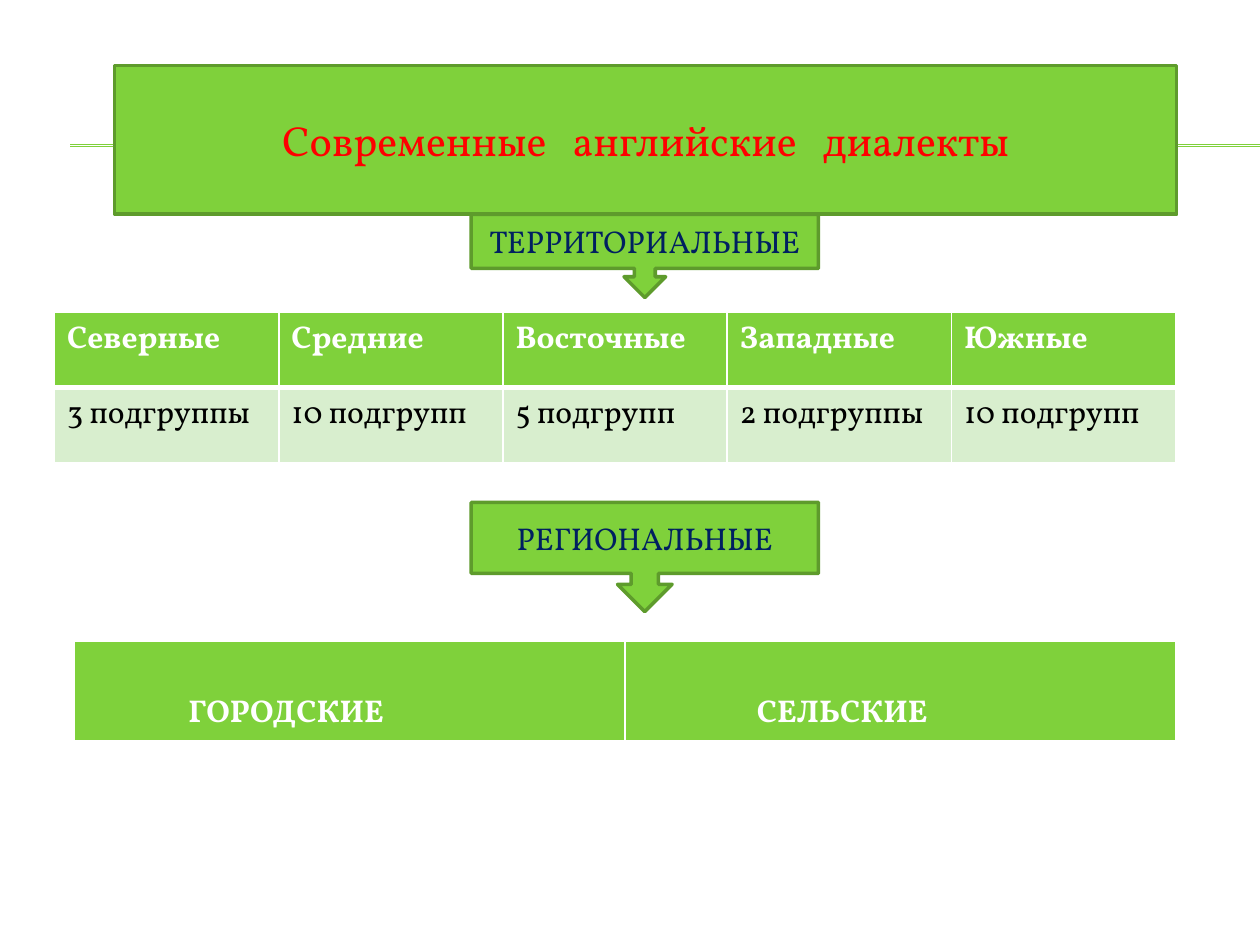
import pptx
import pptx.dml.color
import pptx.enum.shapes
import pptx.enum.text
import pptx.oxml
import pptx.oxml.ns
import pptx.util

Cm = pptx.util.Cm
Pt = pptx.util.Pt
qn = pptx.oxml.ns.qn
SHAPE = pptx.enum.shapes.MSO_SHAPE
MIDDLE = pptx.enum.text.MSO_ANCHOR.MIDDLE
CENTER = pptx.enum.text.PP_ALIGN.CENTER
NSDECL = pptx.oxml.ns.nsdecls("a")

COLORS = {
    "green": "7FD13B",
    "outline": "5E9B2C",
    "pale": "D8EECE",
    "title": "FF0000",
    "navy": "002060",
    "white": "FFFFFF",
    "black": "000000",
}


class SlideBuilder:
    font = "Vollkorn"
    size = 18

    def __init__(self, slide):
        self.slide = slide

    def rgb(self, name):
        return pptx.dml.color.RGBColor.from_string(COLORS[name])

    def place(self, sp, x, y, w, h):
        sp.left, sp.top, sp.width, sp.height = Cm(x), Cm(y), Cm(w), Cm(h)

    def set_font(self, p, color, size=None, bold=False):
        p.font.name = self.font
        p.font.size = Pt(size or self.size)
        p.font.bold = bold
        p.font.color.rgb = self.rgb(color)

    def paint(self, sp):
        sp.fill.solid()
        sp.fill.fore_color.rgb = self.rgb("green")
        sp.line.color.rgb = self.rgb("outline")
        sp.line.width = Pt(2)

    def rule(self, x1, x2, y):
        line = self.slide.shapes.add_connector(
            pptx.enum.shapes.MSO_CONNECTOR.STRAIGHT, Cm(x1), Cm(y), Cm(x2), Cm(y))
        line.line.color.rgb = self.rgb("green")
        line.line.width = Pt(0.75)
        line._element.spPr.append(pptx.oxml.parse_xml(f"<a:effectLst {NSDECL}/>"))
        self.slide.shapes._spTree.insert(2, line._element)

    def scroll_title(self, words, x, y, w, h):
        sp = self.slide.shapes.title
        self.place(sp, x, y, w, h)
        sp._element.spPr.append(pptx.oxml.parse_xml(
            f'<a:prstGeom {NSDECL} prst="horizontalScroll"><a:avLst/></a:prstGeom>'))
        self.paint(sp)
        tf = sp.text_frame
        tf.auto_size = pptx.enum.text.MSO_AUTO_SIZE.NONE
        tf.vertical_anchor = MIDDLE
        p = tf.paragraphs[0]
        for i, word in enumerate(words):
            if i:
                r = p.add_run()
                r.text = " "
                r.font._element.set("spc", "1000")
            p.add_run().text = word
        p.alignment = CENTER
        self.set_font(p, "title", 24)

    def callout(self, text, x, y, w, h):
        sp = self.slide.shapes.add_shape(
            SHAPE.DOWN_ARROW_CALLOUT, Cm(x), Cm(y), Cm(w), Cm(h))
        sp.shadow.inherit = False
        self.paint(sp)
        tf = sp.text_frame
        tf.word_wrap = True
        tf.vertical_anchor = MIDDLE
        p = tf.paragraphs[0]
        p.text = text
        p.alignment = CENTER
        self.set_font(p, "navy")

    def borders(self, cell, top, bottom):
        tc_pr = cell._tc.get_or_add_tcPr()
        for side, width in (("L", 1), ("R", 1), ("T", top), ("B", bottom)):
            tc_pr.append(pptx.oxml.parse_xml(
                f'<a:ln{side} {NSDECL} w="{Pt(width)}"><a:solidFill>'
                f'<a:srgbClr val="{COLORS["white"]}"/></a:solidFill></a:ln{side}>'))

    def table(self, rows, x, y, w, h):
        frame = self.slide.shapes.add_table(
            len(rows), len(rows[0]), Cm(x), Cm(y), Cm(w), Cm(h))
        for i, row in enumerate(rows):
            header = i == 0
            for j, text in enumerate(row):
                cell = frame.table.cell(i, j)
                self.borders(cell, 1 if header else 3, 3 if header else 1)
                cell.fill.solid()
                cell.fill.fore_color.rgb = self.rgb("green" if header else "pale")
                p = cell.text_frame.paragraphs[0]
                p.text = text
                self.set_font(p, "white" if header else "black", bold=header)
        return frame.table


def main():
    prs = pptx.Presentation()
    prs.slide_width, prs.slide_height = Cm(25.4), Cm(19.05)
    s = SlideBuilder(prs.slides.add_slide(prs.slide_layouts[5]))

    for y in (2.95, 2.92):
        s.rule(1.42, 25.4, y)
    s.scroll_title(["Современные", "английские", "диалекты"], 2.31, 1.32, 21.41, 3)
    s.table([
        ["Северные", "Средние", "Восточные", "Западные", "Южные"],
        ["3 подгруппы", "10 подгрупп", "5 подгрупп", "2 подгруппы", "10 подгрупп"],
    ], 1.1, 6.3, 22.6, 3.02)
    s.callout("ТЕРРИТОРИАЛЬНЫЕ", 9.5, 4.32, 7, 1.68)
    s.callout("РЕГИОНАЛЬНЫЕ", 9.5, 10.13, 7, 2.2)

    regional = s.table([["ГОРОДСКИЕ", "СЕЛЬСКИЕ"]], 1.5, 12.93, 22.2, 2)
    for cell, indent in zip(regional.iter_cells(), (2.3, 2.66)):
        cell.margin_left = Cm(indent)
        cell.margin_top = Cm(1.02)

    prs.save("out.pptx")


if __name__ == "__main__":
    main()
